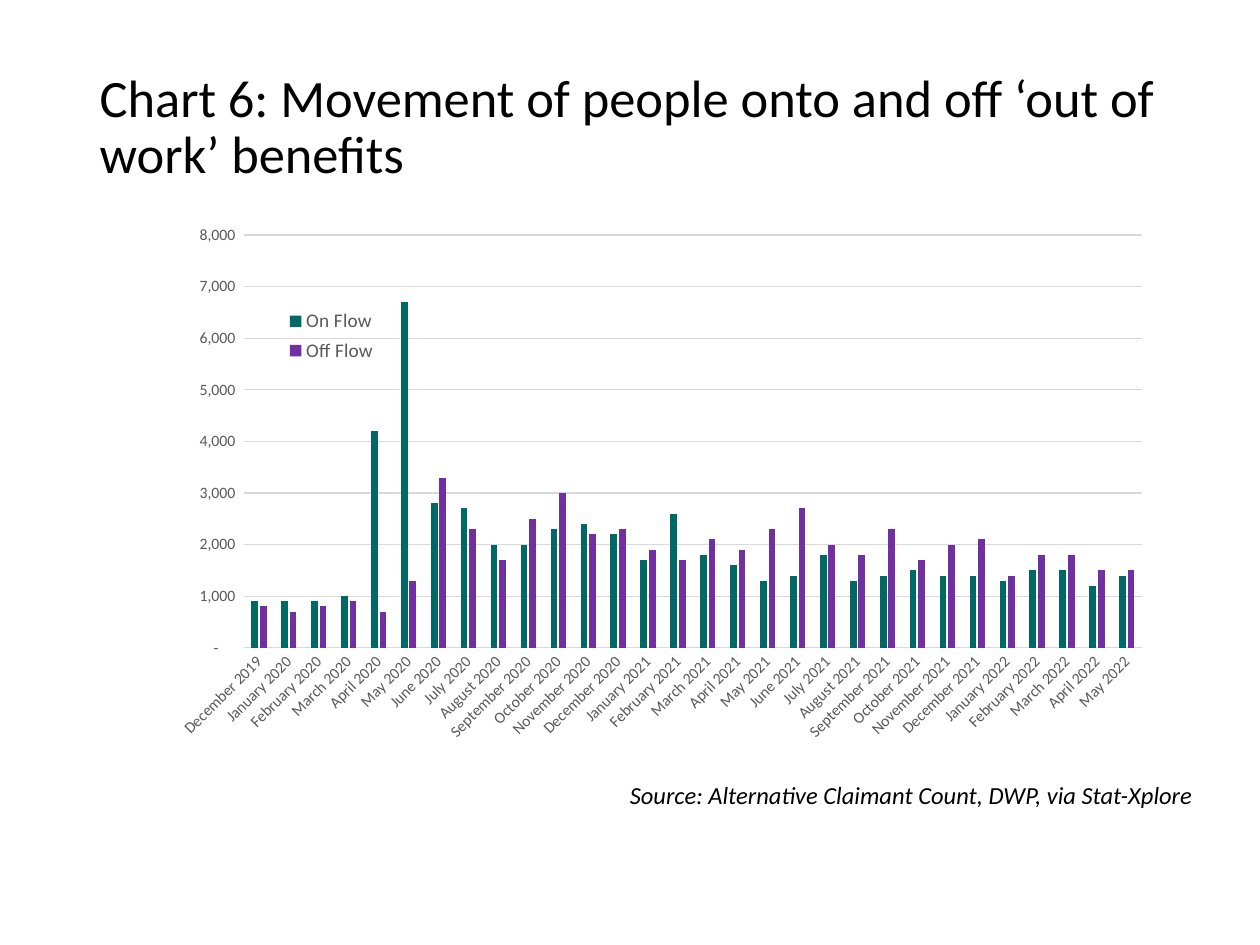
from lxml import etree
from pptx import Presentation
from pptx.chart.data import CategoryChartData
from pptx.dml.color import RGBColor
from pptx.enum.chart import XL_CHART_TYPE, XL_LEGEND_POSITION, XL_TICK_MARK
from pptx.enum.text import MSO_ANCHOR, PP_ALIGN
from pptx.oxml.ns import qn
from pptx.util import Pt

COLUMNS = XL_CHART_TYPE.COLUMN_CLUSTERED
BOTTOM = XL_LEGEND_POSITION.BOTTOM
NO_TICK = XL_TICK_MARK.NONE
MIDDLE = MSO_ANCHOR.MIDDLE
LEFT, RIGHT = PP_ALIGN.LEFT, PP_ALIGN.RIGHT

BLACK = RGBColor(0x00, 0x00, 0x00)
GREY = RGBColor(0x59, 0x59, 0x59)
LIGHT_GREY = RGBColor(0xD9, 0xD9, 0xD9)
TEAL = RGBColor(0x00, 0x69, 0x65)
PURPLE = RGBColor(0x70, 0x30, 0xA0)
FONT = "Calibri"

HEADING = "Chart 6: Movement of people onto and off ‘out of work’ benefits"
SOURCE = "Source: Alternative Claimant Count, DWP, via Stat-Xplore"
MONTH_NAMES = ["January", "February", "March", "April", "May", "June", "July",
               "August", "September", "October", "November", "December"]
FIRST_MONTH, MONTH_COUNT = 2019 * 12 + 11, 30
FLOWS = [
    ("On Flow", TEAL,
     [900, 900, 900, 1000, 4200, 6700, 2800, 2700, 2000, 2000,
      2300, 2400, 2200, 1700, 2600, 1800, 1600, 1300, 1400, 1800,
      1300, 1400, 1500, 1400, 1400, 1300, 1500, 1500, 1200, 1400]),
    ("Off Flow", PURPLE,
     [800, 700, 800, 900, 700, 1300, 3300, 2300, 1700, 2500,
      3000, 2200, 2300, 1900, 1700, 2100, 1900, 2300, 2700, 2000,
      1800, 2300, 1700, 2000, 2100, 1400, 1800, 1800, 1500, 1500]),
]
NUMBER_FORMAT = '_-* #,##0_-;\\-* #,##0_-;_-* "-"??_-;_-@_'

SLIDE_SIZE = (1260, 945)
HEADING_BOX = (87, 64, 1086, 129)
SOURCE_BOX = (568, 774, 637, 43)
CHART_BOX = (161, 214, 1002, 581)
PLOT_BOX = (244, 235, 898, 413)
LEGEND_BOX = (281, 304, 101, 64)
EMU_PER_PX = 914400 / 126


def emu(lengths):
    return [round(length * EMU_PER_PX) for length in lengths]


def style(font, size, color):
    font.name = FONT
    font.size = Pt(size)
    font.color.rgb = color


def place_in_chart(part, box, index, inner=False):
    for old in part.findall(qn("c:layout")):
        part.remove(old)
    layout = etree.Element(qn("c:layout"))
    part.insert(index, layout)
    manual = etree.SubElement(layout, qn("c:manualLayout"))
    left, top, width, height = box
    chart_left, chart_top, chart_width, chart_height = CHART_BOX
    settings = [("xMode", "edge"), ("yMode", "edge"),
                ("x", round((left - chart_left) / chart_width, 4)),
                ("y", round((top - chart_top) / chart_height, 4)),
                ("w", round(width / chart_width, 4)),
                ("h", round(height / chart_height, 4))]
    if inner:
        settings.insert(0, ("layoutTarget", "inner"))
    for tag, value in settings:
        etree.SubElement(manual, qn("c:" + tag)).set("val", str(value))


def add_heading(slide):
    heading = slide.shapes.title
    heading.left, heading.top, heading.width, heading.height = emu(HEADING_BOX)
    frame = heading.text_frame
    frame.text = HEADING
    frame.vertical_anchor = MIDDLE
    paragraph = frame.paragraphs[0]
    paragraph.alignment = LEFT
    paragraph.line_spacing = 0.9
    style(paragraph.font, 30, BLACK)


def add_source(slide):
    frame = slide.shapes.add_textbox(*emu(SOURCE_BOX)).text_frame
    frame.word_wrap = True
    frame.text = SOURCE
    paragraph = frame.paragraphs[0]
    paragraph.alignment = RIGHT
    style(paragraph.font, 14, BLACK)
    paragraph.font.italic = True


def add_flow_chart(slide):
    flow_data = CategoryChartData(number_format="#,##0")
    flow_data.categories = [f"{MONTH_NAMES[month % 12]} {month // 12}"
                            for month in range(FIRST_MONTH, FIRST_MONTH + MONTH_COUNT)]
    for name, _, values in FLOWS:
        flow_data.add_series(name, values)
    chart = slide.shapes.add_chart(COLUMNS, *emu(CHART_BOX), flow_data).chart
    style(chart.font, 10, BLACK)
    chart.has_title = False

    plot = chart.plots[0]
    plot.gap_width = 219
    plot.overlap = -27
    plot.vary_by_categories = False
    for series, (_, color, _) in zip(plot.series, FLOWS):
        series.format.fill.solid()
        series.format.fill.fore_color.rgb = color

    months, people = chart.category_axis, chart.value_axis
    for axis in (months, people):
        axis.major_tick_mark = axis.minor_tick_mark = NO_TICK
        style(axis.tick_labels.font, 9, GREY)
    people.minimum_scale, people.maximum_scale, people.major_unit = 0, 8000, 1000
    people.tick_labels.number_format = NUMBER_FORMAT
    people.tick_labels.number_format_is_linked = False
    people.format.line.fill.background()
    people.has_major_gridlines = True
    for line in (months.format.line, people.major_gridlines.format.line):
        line.color.rgb = LIGHT_GREY
        line.width = Pt(0.75)
    months._element.find(".//" + qn("a:bodyPr")).set("rot", "-2700000")

    chart.has_legend = True
    legend = chart.legend
    legend.position = BOTTOM
    legend.include_in_layout = False
    style(legend.font, 11, GREY)
    place_in_chart(legend._element, LEGEND_BOX, 1)
    place_in_chart(chart._chartSpace.find(".//" + qn("c:plotArea")), PLOT_BOX, 0, inner=True)


def main():
    deck = Presentation()
    deck.slide_width, deck.slide_height = emu(SLIDE_SIZE)
    slide = deck.slides.add_slide(deck.slide_layouts[5])
    add_heading(slide)
    add_source(slide)
    add_flow_chart(slide)
    deck.save("out.pptx")


if __name__ == "__main__":
    main()
